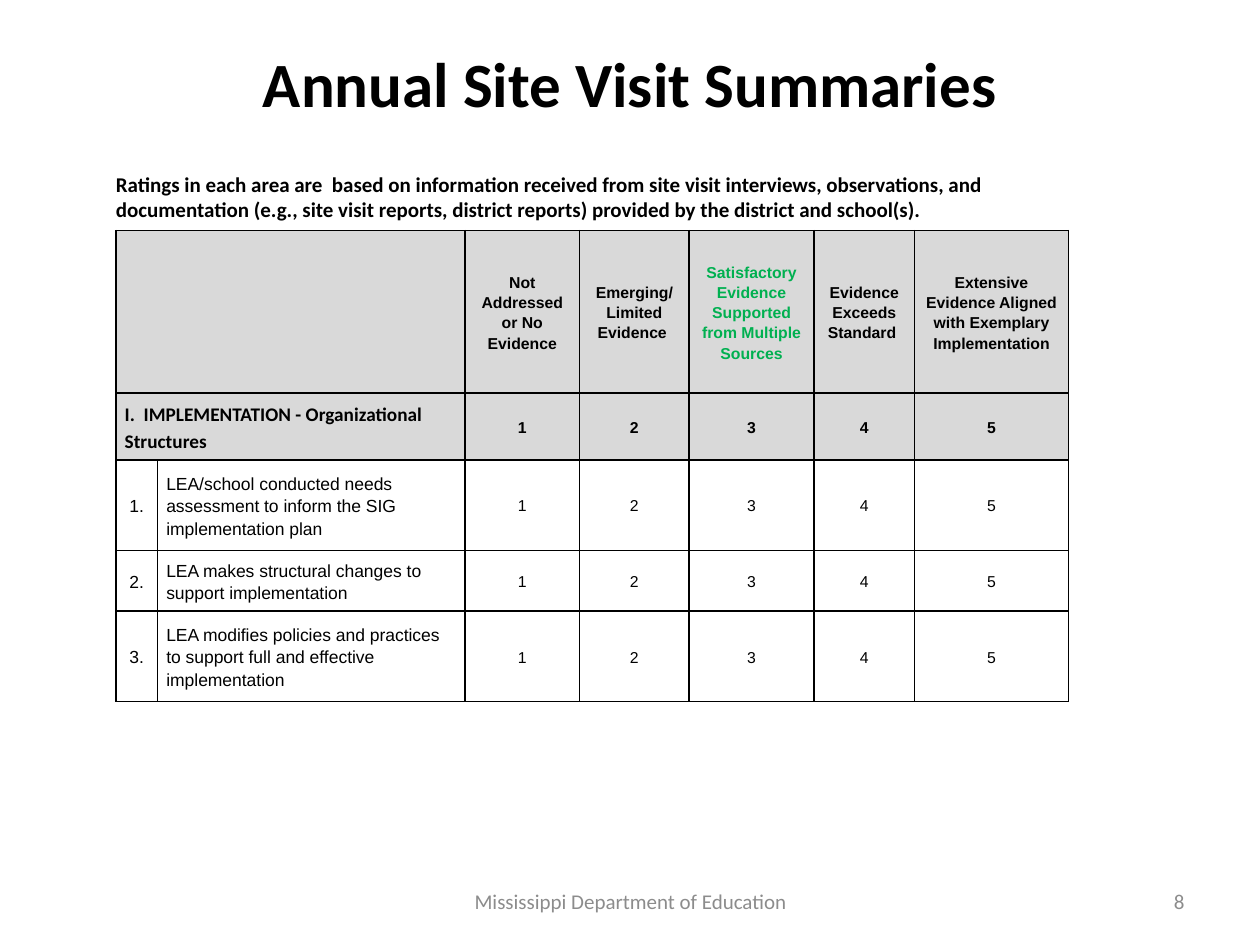
from lxml.etree import SubElement
from pptx import Presentation
from pptx.dml.color import RGBColor
from pptx.enum.text import MSO_ANCHOR, PP_ALIGN
from pptx.oxml.ns import qn
from pptx.util import Inches, Pt


def color(value):
    """Return the colour for a hex string."""
    return RGBColor.from_string(value)


class SlideBuilder:
    """Holds the style and the current slide."""

    black, gray, green, header_fill = "000000", "8C8C8C", "00B050", "D9D9D9"
    heading = {"name": "Calibri", "size": Pt(36), "bold": True}
    intro = {"name": "Calibri", "size": Pt(12), "bold": True}
    footer = {"name": "Calibri", "size": Pt(12), "bold": False}
    section = {"name": "Calibri", "size": Pt(11), "bold": True}
    column_head = {"name": "Arial", "size": Pt(9), "bold": True}
    item = {"name": "Arial", "size": Pt(10), "bold": False}
    rating = {"name": "Arial", "size": Pt(9), "bold": False}
    cell_format = {
        "margin_left": Inches(0.07), "margin_right": Inches(0.07),
        "margin_top": 0, "margin_bottom": 0, "vertical_anchor": MSO_ANCHOR.MIDDLE,
    }

    def __init__(self, presentation):
        """Add a title-only slide."""
        self.slide = presentation.slides.add_slide(presentation.slide_layouts[5])

    def fill_text(self, frame, text, font, hue=black, align=PP_ALIGN.LEFT, spacing=None):
        """Fill a text frame and format its paragraphs."""
        frame.text = text
        for paragraph in frame.paragraphs:
            paragraph.alignment = align
            paragraph.line_spacing = spacing
            for run in paragraph.runs:
                for name, value in font.items():
                    setattr(run.font, name, value)
                run.font.color.rgb = color(hue)

    def title(self, text, left, top, width, height):
        """Place and fill the title placeholder."""
        shape = self.slide.shapes.title
        place = {"left": left, "top": top, "width": width, "height": height}
        for name, value in place.items():
            setattr(shape, name, Inches(value))
        shape.text_frame.vertical_anchor = MSO_ANCHOR.TOP
        self.fill_text(shape.text_frame, text, self.heading, align=PP_ALIGN.CENTER)

    def text(self, text, place, font, hue=black, align=PP_ALIGN.LEFT, **frame_format):
        """Add a wrapped text box."""
        shape = self.slide.shapes.add_textbox(*map(Inches, place))
        frame_format = {"word_wrap": True, **frame_format}
        for name, value in frame_format.items():
            setattr(shape.text_frame, name, value)
        self.fill_text(shape.text_frame, text, font, hue, align)

    def table(self, left, top, columns, rows):
        """Add an empty table with the given column widths and row heights."""
        size = map(Inches, (left, top, sum(columns), sum(rows)))
        table = self.slide.shapes.add_table(len(rows), len(columns), *size).table
        for column, width in zip(table.columns, columns):
            column.width = Inches(width)
        for row, height in zip(table.rows, rows):
            row.height = Inches(height)
        return table

    def cell(self, cell, text, font, fill=None, hue=black, align=PP_ALIGN.CENTER):
        """Fill, border and label one table cell."""
        for name, value in self.cell_format.items():
            setattr(cell, name, value)
        properties = cell._tc.get_or_add_tcPr()
        for side in ("a:lnL", "a:lnR", "a:lnT", "a:lnB"):
            line = SubElement(properties, qn(side), w=str(Pt(1)))
            SubElement(SubElement(line, qn("a:solidFill")), qn("a:srgbClr"), val=self.black)
        if fill:
            cell.fill.solid()
            cell.fill.fore_color.rgb = color(fill)
        else:
            cell.fill.background()
        self.fill_text(cell.text_frame, text, font, hue, align, 1.15)


def add_ratings(builder):
    """Add the table of ratings."""
    scale = ["1", "2", "3", "4", "5"]
    headers = [
        "Not Addressed or No Evidence",
        "Emerging/ Limited\nEvidence ",
        "Satisfactory Evidence Supported from Multiple Sources",
        "Evidence Exceeds Standard ",
        "Extensive Evidence Aligned with Exemplary Implementation",
    ]
    items = [
        "LEA/school conducted needs assessment to inform the SIG implementation plan",
        "LEA makes structural changes to support implementation",
        "LEA modifies policies and practices to support full and effective implementation",
    ]
    heads = [
        ["", ""] + headers,
        ["I.  IMPLEMENTATION - Organizational Structures", ""] + scale,
    ]
    body = [[f"{number}.", item] + scale for number, item in enumerate(items, 1)]
    table = builder.table(
        0.92, 1.83, [0.33, 2.44, 0.91, 0.87, 0.99, 0.8, 1.22], [1.29, 0.53, 0.72, 0.48, 0.72]
    )
    for row, texts in enumerate(heads + body):
        is_head = row < len(heads)
        fill = builder.header_fill if is_head else None
        for column, text in enumerate(texts):
            if column < 2:
                font = builder.section if is_head else builder.item
            else:
                font = builder.column_head if is_head else builder.rating
            left_aligned = column == 1 or (is_head and column == 0)
            align = PP_ALIGN.LEFT if left_aligned else PP_ALIGN.CENTER
            hue = builder.green if (row, column) == (0, 4) else builder.black
            builder.cell(table.cell(row, column), text, font, fill, hue, align)
        if is_head:
            table.cell(row, 0).merge(table.cell(row, 1))


def main():
    """Build and save the slide."""
    presentation = Presentation()
    presentation.slide_width, presentation.slide_height = Inches(10), Inches(7.5)
    builder = SlideBuilder(presentation)
    builder.title("Annual Site Visit Summaries", 0.5, 0.3, 9, 1.53)
    add_ratings(builder)
    builder.text(
        "Ratings in each area are  based on information received from site visit interviews, "
        "observations, and documentation (e.g., site visit reports, district reports) "
        "provided by the district and school(s).",
        (0.92, 1.3, 7.5, 0.84), builder.intro,
        margin_left=0, margin_right=0, margin_top=Inches(0.06),
    )
    footers = [
        ("Mississippi Department of Education", (3.42, 6.95, 3.17, 0.4), PP_ALIGN.CENTER),
        ("8", (7.17, 6.95, 2.33, 0.4), PP_ALIGN.RIGHT),
    ]
    for text, place, align in footers:
        builder.text(
            text, place, builder.footer, builder.gray, align, vertical_anchor=MSO_ANCHOR.MIDDLE
        )
    presentation.save("out.pptx")


if __name__ == "__main__":
    main()
